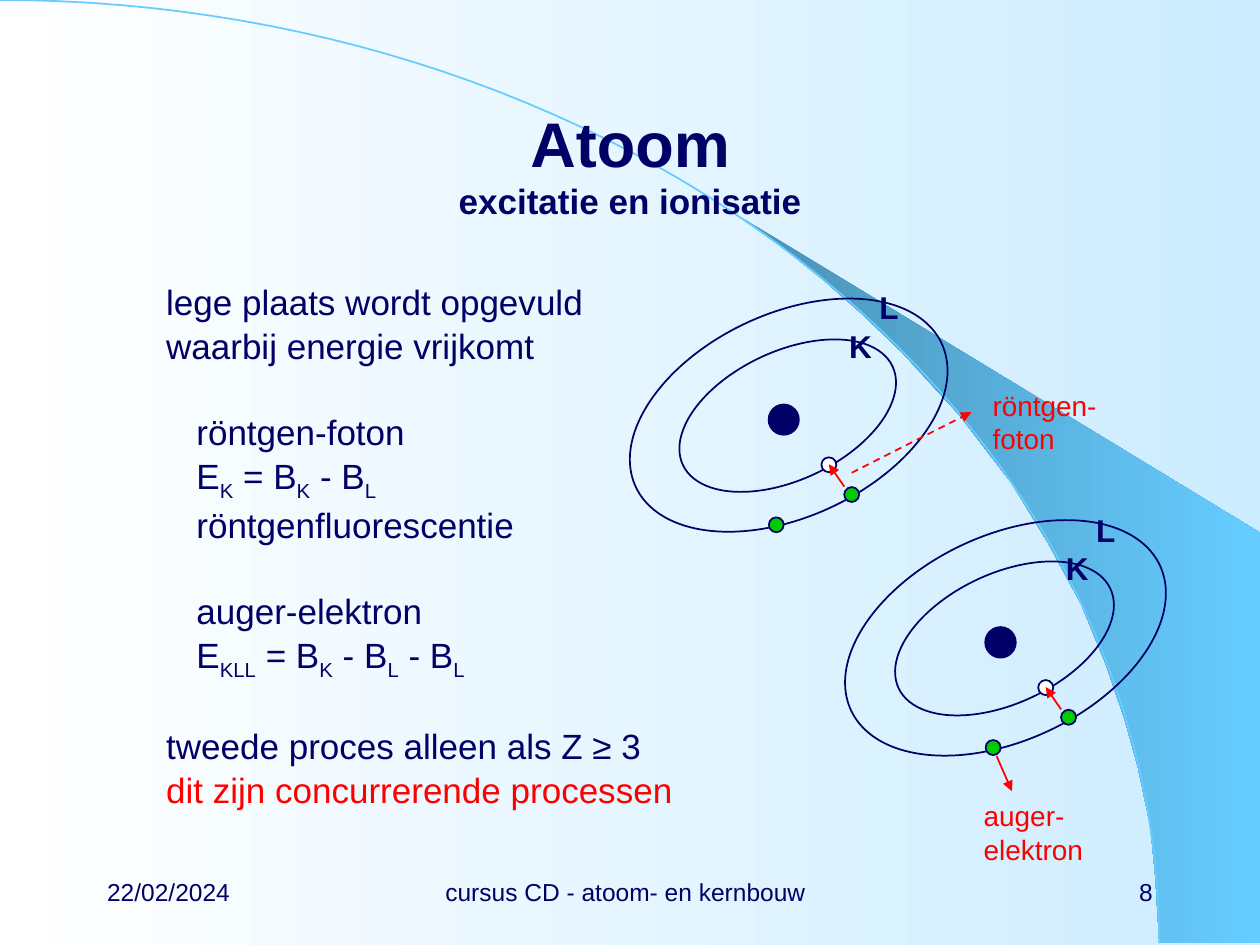
"""Build the slide on excitation and ionisation of the atom."""
import math

import pptx
import pptx.dml.color
import pptx.enum.dml
import pptx.enum.shapes
import pptx.enum.text
import pptx.oxml.ns
import pptx.util

Cm, Pt = pptx.util.Cm, pptx.util.Pt
colour = pptx.dml.color.RGBColor.from_string
Align = pptx.enum.text.PP_ALIGN
Anchor = pptx.enum.text.MSO_ANCHOR
NAVY, RED, GREEN, WHITE, SKY = "000066", "FF0000", "00CC00", "FFFFFF", "66CCFF"

deck = pptx.Presentation()
deck.slide_width, deck.slide_height = Cm(25.4), Cm(19.05)
page = deck.slides.add_slide(deck.slide_layouts[6])


def write_box(place, lines, anchor=Anchor.TOP, align=Align.LEFT):
    """Add a text box; parts between bars in a line are subscripts."""
    box = page.shapes.add_textbox(*map(Cm, place))
    box.text_frame.word_wrap = True
    box.text_frame.vertical_anchor = anchor
    for number, (text, look) in enumerate(lines):
        frame = box.text_frame
        para = frame.add_paragraph() if number else frame.paragraphs[0]
        para.alignment = align
        para.space_before = Pt(look.get("before", 0))
        para._p.get_or_add_pPr().set("marL", str(Cm(look.get("indent", 0))))
        for part, words in enumerate(text.split("|")):
            if not words:
                continue
            span = para.add_run()
            span.text = words
            font = {"name": "Arial", "size": Pt(look["size"]), "bold": look.get("bold", False)}
            for key, value in font.items():
                setattr(span.font, key, value)
            span.font.color.rgb = colour(look.get("colour", NAVY))
            if part % 2:
                span._r.get_or_add_rPr().set("baseline", "-25000")


def shade(fill, stops):
    """Fill from left to right with a two-colour gradient."""
    fill.gradient()
    fill.gradient_angle = 0
    for stop, value in zip(fill.gradient_stops, stops):
        stop.color.rgb = colour(value)


shade(page.background.fill, (WHITE, "CCECFF"))

wedge_points = [
    (23.37, 19), (25.4, 19.02), (25.4, 10.74), (14.96, 4.39), (15.85, 5.05), (16.59, 5.64),
    (17.4, 6.35), (18.19, 7.11), (19.35, 8.38), (20.4, 9.75), (21.13, 10.95), (21.79, 12.17),
    (22.3, 13.41), (22.68, 14.53), (22.94, 15.47), (23.19, 16.66), (23.29, 17.68),
]
steps = 60
angles = [math.pi / 2 * step / steps for step in range(steps + 1)]
arc_points = [(23.37 * math.sin(a), 19.02 * (1 - math.cos(a))) for a in angles]

outlines = []
for points, closed in ((wedge_points, True), (arc_points, False)):
    corners = [(Cm(x), Cm(y)) for x, y in points]
    builder = page.shapes.build_freeform(*corners[0])
    builder.add_line_segments(corners[1:], close=closed)
    outline = builder.convert_to_shape()
    outline.shadow.inherit = False
    outlines.append(outline)
wedge, arc = outlines
shade(wedge.fill, ("4992B6", SKY))
wedge.line.fill.background()
arc.fill.background()
arc.line.color.rgb = colour(SKY)
arc.line.width = Pt(1)

footer = {"size": 14}
for left, width, text, align in (
    (1.91, 5.28, "22/02/2024", Align.LEFT),
    (7.11, 11, "cursus CD - atoom- en kernbouw", Align.CENTER),
    (18.21, 5.28, "8", Align.RIGHT),
):
    write_box((left, 17.35, width, 1.27), [(text, footer)], Anchor.MIDDLE, align)

title_lines = [
    ("Atoom", {"size": 36, "bold": True}),
    ("excitatie en ionisatie", {"size": 20, "bold": True}),
]
write_box((1.91, 1.7, 21.59, 3.18), title_lines, Anchor.MIDDLE, Align.CENTER)

plain = {"size": 20, "before": 1, "indent": 1.19}
inset = {**plain, "indent": 1.8}
gap = {"before": 25}
write_box((1.91, 5.54, 14, 11.43), [
    ("lege plaats wordt opgevuld", plain),
    ("waarbij energie vrijkomt", plain),
    ("röntgen-foton", {**inset, **gap}),
    ("E|K| = B|K| - B|L|", inset),
    ("röntgenfluorescentie", inset),
    ("auger-elektron", {**inset, **gap}),
    ("E|KLL| = B|K| - B|L| - B|L|", inset),
    ("tweede proces alleen als Z ≥ 3", {**plain, **gap}),
    ("dit zijn concurrerende processen", {**plain, "colour": RED}),
])

# offset from nucleus, width, height, rotation, fill
atom_parts = [
    (0.1, -0.09, 6.81, 4.09, 334.8, None),
    (1.37, 1.51, 0.3, 0.3, 0, GREEN),
    (-0.15, 2.12, 0.3, 0.3, 0, GREEN),
    (0, 0, 0.61, 0.61, 0, NAVY),
    (0.08, -0.08, 4.67, 2.59, 334.8, None),
    (0.91, 0.91, 0.3, 0.3, 0, WHITE),
]
shell_look = {"size": 18, "bold": True}
arrows = [(17.17, 9.53, 19.58, 8.31, True), (20.09, 15.24, 20.4, 15.95, False)]
for centre_x, centre_y, scale in ((15.8, 8.46, 1), (20.17, 12.95, 1.01)):
    for across, down, width, height, rotation, fill in atom_parts:
        width, height = width * scale, height * scale
        left, top = centre_x + across - width / 2, centre_y + down - height / 2
        ellipse = page.shapes.add_shape(
            pptx.enum.shapes.MSO_SHAPE.OVAL, Cm(left), Cm(top), Cm(width), Cm(height))
        ellipse.shadow.inherit = False
        ellipse.rotation = rotation
        ellipse.line.color.rgb = colour(NAVY)
        ellipse.line.width = Pt(1)
        if fill:
            ellipse.fill.solid()
            ellipse.fill.fore_color.rgb = colour(fill)
        else:
            ellipse.fill.background()
    for shell, across, down in (("K", 1.07, -2), ("L", 1.68, -2.78)):
        write_box((centre_x + across, centre_y + down, 1, 0.8), [(shell, shell_look)])
    arrows.append((centre_x + 1.22, centre_y + 1.35, centre_x + 0.91, centre_y + 0.9, False))

for *ends, dashed in arrows:
    arrow = page.shapes.add_connector(
        pptx.enum.shapes.MSO_CONNECTOR.STRAIGHT, *map(Cm, ends))
    arrow.line.color.rgb = colour(RED)
    arrow.line.width = Pt(1)
    if dashed:
        arrow.line.dash_style = pptx.enum.dml.MSO_LINE.DASH
    head = pptx.oxml.parse_xml(
        f'<a:tailEnd {pptx.oxml.ns.nsdecls("a")} type="triangle"/>')
    arrow.line._get_or_add_ln().append(head)
    arrow._element.spPr.append(
        pptx.oxml.parse_xml(f'<a:effectLst {pptx.oxml.ns.nsdecls("a")}/>'))

particle_look = {"size": 16, "colour": RED}
for left, top, width, text in (
    (19.76, 7.7, 3.07, "röntgen-foton"),
    (19.58, 15.98, 3.3, "auger-elektron"),
):
    write_box((left, top, width, 1.5), [(text, particle_look)])

deck.save("out.pptx")
